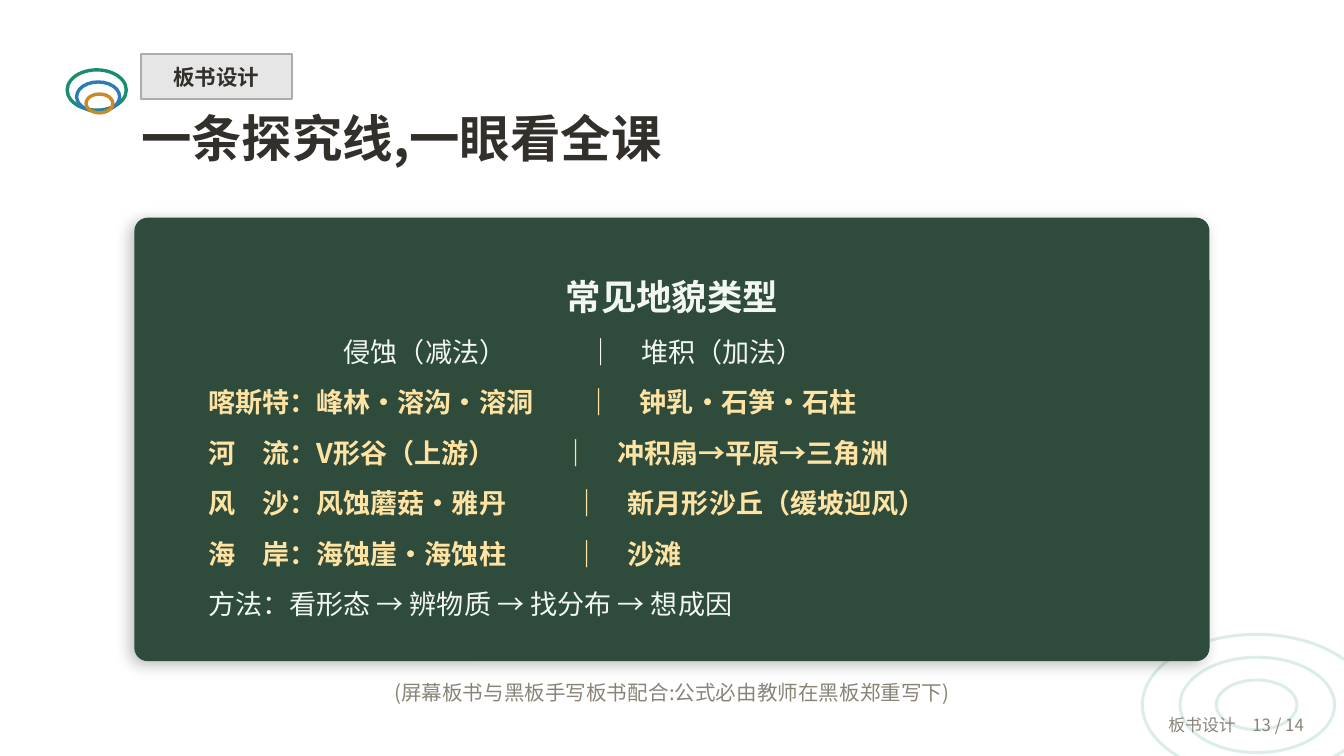
import pptx
import pptx.util
import pptx.dml.color
import pptx.enum.shapes
import pptx.enum.text
import pptx.oxml
import pptx.oxml.ns

W = 10
H = W * 9 / 16
FONT = "Noto Sans CJK SC"
INK, GREY, CHALK, GOLD = "33302B", "8A8478", "F2F7F0", "FFE3A3"
TOPIC = "板书设计"
TITLE = "一条探究线,一眼看全课"
HEAD = "常见地貌类型"
ROWS = [
    ("\t侵蚀（减法）\t｜　堆积（加法）", CHALK, False, (1.01, 2.82)),
    ("喀斯特：峰林·溶沟·溶洞\t｜　钟乳·石笋·石柱", GOLD, True, (2.81,)),
    ("河　流：V形谷（上游）\t｜　冲积扇→平原→三角洲", GOLD, True, (2.64,)),
    ("风　沙：风蚀蘑菇·雅丹\t｜　新月形沙丘（缓坡迎风）", GOLD, True, (2.72,)),
    ("海　岸：海蚀崖·海蚀柱\t｜　沙滩", GOLD, True, (2.72,)),
    ("方法：看形态 → 辨物质 → 找分布 → 想成因", CHALK, False, ()),
]
NOTE = "(屏幕板书与黑板手写板书配合:公式必由教师在黑板郑重写下)"
PAGE = "13 / 14"
RINGS = [
    ((8.5, 4.72, 1.7, 1.05), "DBEDE8", 1.6),
    ((8.78, 4.89, 1.15, 0.71), "DBEDE8", 1.6),
    ((9.05, 5.06, 0.6, 0.37), "DBEDE8", 1.6),
    ((0.5, 0.52, 0.44, 0.3), "1C8C6E", 1.8),
    ((0.57, 0.61, 0.32, 0.22), "2C7BB8", 1.8),
    ((0.64, 0.7, 0.2, 0.14), "C98A2E", 1.8),
]

KIND = pptx.enum.shapes.MSO_SHAPE
ALIGN = pptx.enum.text.PP_ALIGN
ANCHOR = pptx.enum.text.MSO_ANCHOR
NS = pptx.oxml.ns.nsdecls("a")
Pt = pptx.util.Pt


def rgb(code):
    return pptx.dml.color.RGBColor.from_string(code)


def inch(box):
    return [pptx.util.Inches(n) for n in box]


def shape(kind, box, fill=None, line=None, width=1):
    item = slide.shapes.add_shape(kind, *inch(box))
    item.shadow.inherit = False
    if fill:
        item.fill.solid()
        item.fill.fore_color.rgb = rgb(fill)
    else:
        item.fill.background()
    if line:
        item.line.color.rgb = rgb(line)
        item.line.width = Pt(width)
    else:
        item.line.fill.background()
    return item


def style(para, size, color, bold=False, align=ALIGN.LEFT):
    para.alignment = align
    for run in para.runs:
        font = run.font
        font.name, font.size, font.bold = FONT, Pt(size), bold
        font.color.rgb = rgb(color)
        font._element.append(pptx.oxml.parse_xml(f'<a:ea {NS} typeface="{FONT}"/>'))


def frame(item, anchor=ANCHOR.MIDDLE, flush=False):
    text = item.text_frame
    text.word_wrap = True
    text.auto_size = pptx.enum.text.MSO_AUTO_SIZE.NONE
    text.vertical_anchor = anchor
    if flush:
        text.margin_left = text.margin_right = 0
        text.margin_top = text.margin_bottom = 0
    return text


def label(words, box, size, color, align):
    text = frame(slide.shapes.add_textbox(*inch(box)))
    text.text = words
    style(text.paragraphs[0], size, color, False, align)


def tabs(para, stops):
    if stops:
        marks = "".join(f'<a:tab pos="{pptx.util.Inches(s)}" algn="l"/>' for s in stops)
        para._p.get_or_add_pPr().append(
            pptx.oxml.parse_xml(f"<a:tabLst {NS}>{marks}</a:tabLst>"))


deck = pptx.Presentation()
deck.slide_width, deck.slide_height = inch((W, H))
slide = deck.slides.add_slide(deck.slide_layouts[5])

title = slide.shapes.title
title.left, title.top, title.width, title.height = inch((1.05, 0.8, 8.4, 0.55))
text = frame(title, ANCHOR.TOP, True)
text.text = TITLE
style(text.paragraphs[0], 27, INK, True)

for box, color, width in RINGS:
    shape(KIND.OVAL, box, line=color, width=width)

tag = shape(KIND.RECTANGLE, (1.05, 0.4, 1.12, 0.34), "E7E6E6", "ADACAA")
text = frame(tag, flush=True)
text.text = TOPIC
style(text.paragraphs[0], 11.5, INK, True, ALIGN.CENTER)

board = shape(KIND.ROUNDED_RECTANGLE, (1, 1.62, 0.8 * W, 3.3), "2E4B3C")
board.adjustments[0] = 0.03
glow = board._element.spPr.find(pptx.oxml.ns.qn("a:effectLst"))
glow.append(pptx.oxml.parse_xml(
    f'<a:outerShdw {NS} blurRad="{Pt(8)}" dist="{Pt(3)}" dir="8100000" algn="bl" '
    'rotWithShape="0"><a:srgbClr val="000000"><a:alpha val="25000"/></a:srgbClr>'
    '</a:outerShdw>'))

text = frame(slide.shapes.add_textbox(*inch((1.45, 1.85, 7.1, 2.9))))
text.text = "\n".join([HEAD] + [row[0] for row in ROWS])
head, *lines = text.paragraphs
style(head, 19, CHALK, True, ALIGN.CENTER)
for para, (words, color, bold, stops) in zip(lines, ROWS):
    tabs(para, stops)
    style(para, 14.5, color, bold)
for para in text.paragraphs:
    para.line_spacing = Pt(27)

label(NOTE, (1, 5, 0.8 * W, 0.3), 11, GREY, ALIGN.CENTER)
label(f"{TOPIC}　{PAGE}", (8, 5.24, 1.8, 0.3), 9, GREY, ALIGN.RIGHT)

deck.save("out.pptx")
